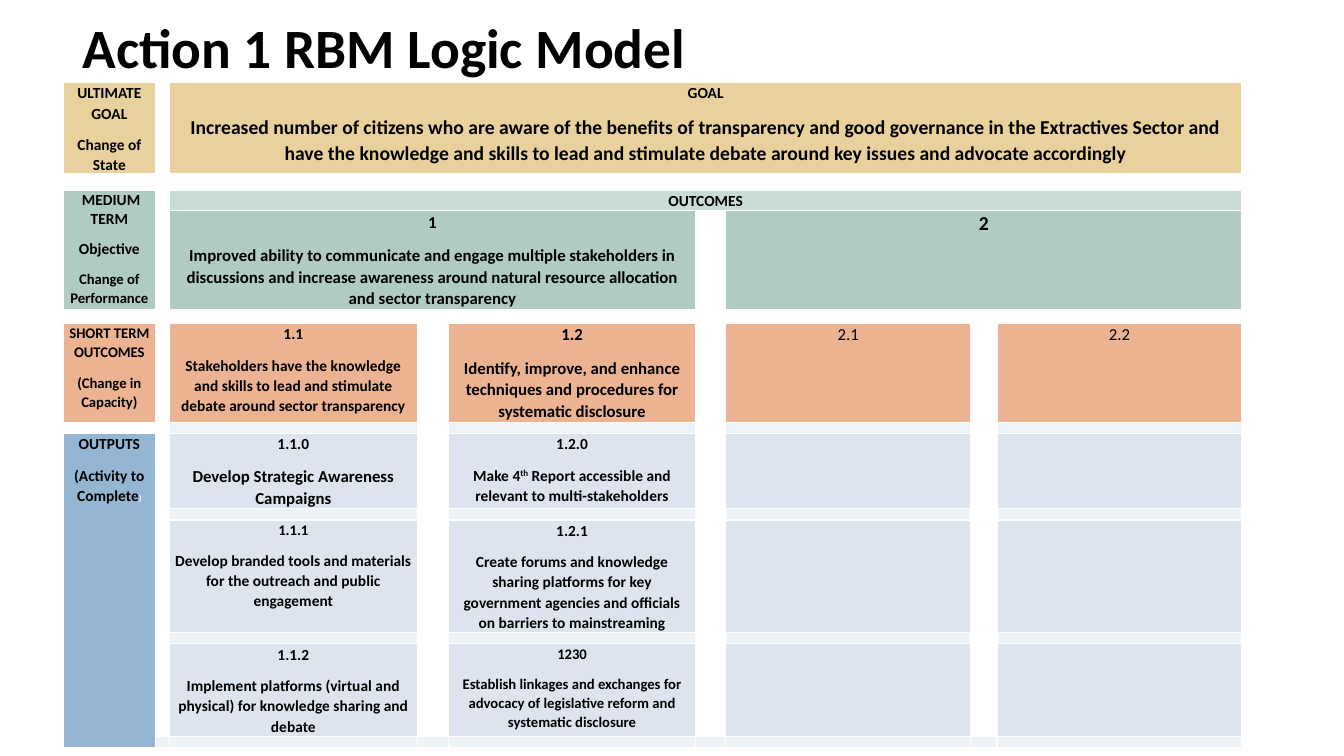
from dataclasses import dataclass
from typing import Any

from lxml.etree import SubElement
from pptx import Presentation
from pptx.dml.color import RGBColor as Rgb
from pptx.enum.text import MSO_ANCHOR as Anchor, MSO_AUTO_SIZE as AutoSize, PP_ALIGN as Align
from pptx.oxml.ns import qn
from pptx.table import Table, _Cell as Cell
from pptx.util import Inches, Pt


@dataclass(frozen=True)
class Theme:
    font: str = "Calibri"
    text: str = "000000"
    white: str = "FFFFFF"
    goal: str = "E8D19D"
    medium: str = "B0CAC4"
    medium_light: str = "CADCD8"
    short: str = "EBB391"
    outputs: str = "94B6D2"
    output: str = "DCE5EE"
    spacer: str = "EEF3F7"
    title_size: float = 39.6
    large: float = 14
    medium_size: float = 12
    body: float = 11
    small: float = 10.5
    tiny: float = 6
    blank: float = 1


THEME = Theme()


@dataclass(frozen=True)
class Piece:
    text: str
    size: float = THEME.body
    color: str = THEME.text
    bold: bool = True
    raised: bool = False


@dataclass(frozen=True)
class Line:
    pieces: tuple[Piece, ...]
    spacing: float = 1.07


@dataclass(frozen=True)
class Block:
    row: int
    columns: tuple[int, int]
    fill: str
    lines: tuple[Line, ...] = ()
    rows: int = 1


def line(text: str, size: float = THEME.body, bold: bool = True, spacing: float = 1.07) -> Line:
    return Line((Piece(text, size, bold=bold),), spacing)


def numbered(number: str, statement: str, number_size: float = THEME.body,
             statement_size: float = THEME.body) -> tuple[Line, ...]:
    return line(number, number_size), line(statement, statement_size)


COLUMN_WIDTHS = (0.91, 0.14, 2.46, 0.31, 1.08, 1.37, 0.3, 1.08, 1.35, 0.26, 1.13, 1.3)
ROW_HEIGHTS = (0.89, 0.15, 0.19, 0.98, 0.14, 0.98, 0.11, 0.74, 0.11, 1.12, 0.11, 0.91, 0.11)
LEVEL, FULL = (0, 0), (2, 11)
LANES = ((2, 2), (4, 5), (7, 8), (10, 11))
GAPS = ((1, 1), (3, 3), (6, 6), (9, 9))
SPACER_ROWS = (6, 8, 10, 12)

LEVELS = (
    Block(0, LEVEL, THEME.goal, (line("ULTIMATE GOAL"), line("Change of State"))),
    Block(2, LEVEL, THEME.medium, (
        line(" MEDIUM TERM", spacing=1), line("Objective", spacing=1),
        line("Change of Performance", THEME.small)), rows=2),
    Block(5, LEVEL, THEME.short, (
        line("SHORT TERM OUTCOMES", THEME.small), line("(Change in Capacity)", THEME.small))),
    Block(7, LEVEL, THEME.outputs, (
        line("OUTPUTS"),
        Line((Piece("(Activity to Complete"), Piece(")", THEME.tiny, THEME.white)))), rows=6),
)

GOAL_AND_OUTCOMES = (
    Block(0, FULL, THEME.goal, numbered(
        "GOAL",
        "Increased number of citizens who are aware of the benefits of transparency and good "
        "governance in the Extractives Sector and have the knowledge and skills to lead and "
        "stimulate debate around key issues and advocate accordingly",
        statement_size=THEME.large)),
    Block(2, FULL, THEME.medium_light, (line("OUTCOMES"),)),
    Block(3, (2, 5), THEME.medium, numbered(
        "1",
        "Improved ability to communicate and engage multiple stakeholders in discussions and "
        "increase awareness around natural resource allocation and sector transparency",
        THEME.medium_size, THEME.medium_size)),
    Block(3, (7, 11), THEME.medium, (line("2", THEME.large),)),
)

SHORT_TERM = (
    numbered("1.1", "Stakeholders have the knowledge and skills to lead and stimulate debate "
                    "around sector transparency"),
    numbered("1.2", "Identify, improve, and enhance techniques and procedures for systematic "
                    "disclosure", THEME.medium_size, THEME.medium_size),
    (line("2.1", THEME.medium_size, bold=False),),
    (line("2.2", THEME.medium_size, bold=False),),
)

OUTPUTS = {
    7: (numbered("1.1.0", "Develop Strategic Awareness Campaigns",
                 statement_size=THEME.medium_size),
        (line("1.2.0"), Line((Piece("Make 4"), Piece("th", raised=True),
                              Piece(" Report accessible and relevant to multi-stakeholders")))),
        (), ()),
    9: (numbered("1.1.1", "Develop branded tools and materials for the outreach and public "
                          "engagement", THEME.small),
        numbered("1.2.1", "Create forums and knowledge sharing platforms for key government "
                          "agencies and officials on barriers to mainstreaming"),
        (), ()),
    11: (numbered("1.1.2", "Implement platforms (virtual and physical) for knowledge sharing "
                           "and debate"),
         numbered("1230", "Establish linkages and exchanges for advocacy of legislative reform "
                          "and systematic disclosure", THEME.small, THEME.small),
         (), ()),
}


def model_blocks() -> list[Block]:
    blocks = [*LEVELS, *GOAL_AND_OUTCOMES]
    blocks += [Block(5, lane, THEME.short, lines) for lane, lines in zip(LANES, SHORT_TERM)]
    for row, outputs in OUTPUTS.items():
        blocks += [Block(row, lane, THEME.output, lines) for lane, lines in zip(LANES, outputs)]
    for row in SPACER_ROWS:
        blocks += [Block(row, lane, THEME.spacer) for lane in LANES]
    return blocks + [Block(SPACER_ROWS[-1], gap, THEME.spacer) for gap in GAPS]


def apply(target: Any, formats: dict[str, Any]) -> None:
    for attribute, value in formats.items():
        setattr(target, attribute, value)


def fill_cell(cell: Cell, color: str) -> None:
    cell.fill.solid()
    cell.fill.fore_color.rgb = Rgb.from_string(color)


def prepare_cell(cell: Cell, bottom_width: float) -> None:
    """Give an empty cell white borders, a white fill and a height that text does not force."""
    apply(cell, {"margin_left": Inches(0.05), "margin_right": Inches(0.05),
                 "margin_top": 0, "margin_bottom": 0, "vertical_anchor": Anchor.TOP})
    properties = cell._tc.get_or_add_tcPr()
    for side, width in (("L", 1), ("R", 1), ("T", 1), ("B", bottom_width)):
        border = SubElement(properties, qn(f"a:ln{side}"), w=str(Pt(width)))
        SubElement(SubElement(border, qn("a:solidFill")), qn("a:srgbClr"), val=THEME.white)
    fill_cell(cell, THEME.white)
    SubElement(cell.text_frame.paragraphs[0]._p, qn("a:endParaRPr"),
               sz=str(int(THEME.blank * 100)))


def write_lines(cell: Cell, lines: tuple[Line, ...]) -> None:
    frame = cell.text_frame
    for index, content in enumerate(lines):
        paragraph = frame.add_paragraph() if index else frame.paragraphs[0]
        apply(paragraph, {"alignment": Align.CENTER, "line_spacing": content.spacing,
                          "space_after": Pt(8)})
        for piece in content.pieces:
            run = paragraph.add_run()
            run.text = piece.text
            apply(run.font, {"name": THEME.font, "size": Pt(piece.size), "bold": piece.bold})
            run.font.color.rgb = Rgb.from_string(piece.color)
            if piece.raised:
                run.font._element.set("baseline", "30000")


def draw_block(table: Table, block: Block) -> None:
    first, last = block.columns
    cell = table.cell(block.row, first)
    if last > first or block.rows > 1:
        cell.merge(table.cell(block.row + block.rows - 1, last))
    fill_cell(cell, block.fill)
    write_lines(cell, block.lines)


def main() -> None:
    deck = Presentation()
    apply(deck, {"slide_width": Inches(13.33), "slide_height": Inches(7.5)})
    slide = deck.slides.add_slide(deck.slide_layouts[5])

    title = slide.shapes.title
    apply(title, {"left": Inches(0.72), "top": Inches(0.19),
                  "width": Inches(11.5), "height": Inches(0.63)})
    title.text_frame.text = "Action 1 RBM Logic Model"
    apply(title.text_frame, {"vertical_anchor": Anchor.MIDDLE, "word_wrap": True,
                             "auto_size": AutoSize.NONE})
    heading = title.text_frame.paragraphs[0]
    apply(heading, {"alignment": Align.LEFT, "line_spacing": 0.9})
    title_font = heading.runs[0].font
    apply(title_font, {"name": THEME.font, "size": Pt(THEME.title_size), "bold": True})
    title_font.color.rgb = Rgb.from_string(THEME.text)

    model = slide.shapes.add_table(
        len(ROW_HEIGHTS), len(COLUMN_WIDTHS), Inches(0.63), Inches(0.82),
        Inches(sum(COLUMN_WIDTHS)), Inches(sum(ROW_HEIGHTS))).table
    apply(model, {"first_row": False, "horz_banding": False})
    for column, width in zip(model.columns, COLUMN_WIDTHS):
        column.width = Inches(width)
    for index, (row, height) in enumerate(zip(model.rows, ROW_HEIGHTS)):
        row.height = Inches(height)
        for cell in row.cells:
            prepare_cell(cell, bottom_width=1 if index else 3)
    for block in model_blocks():
        draw_block(model, block)
    deck.save("out.pptx")


if __name__ == "__main__":
    main()
